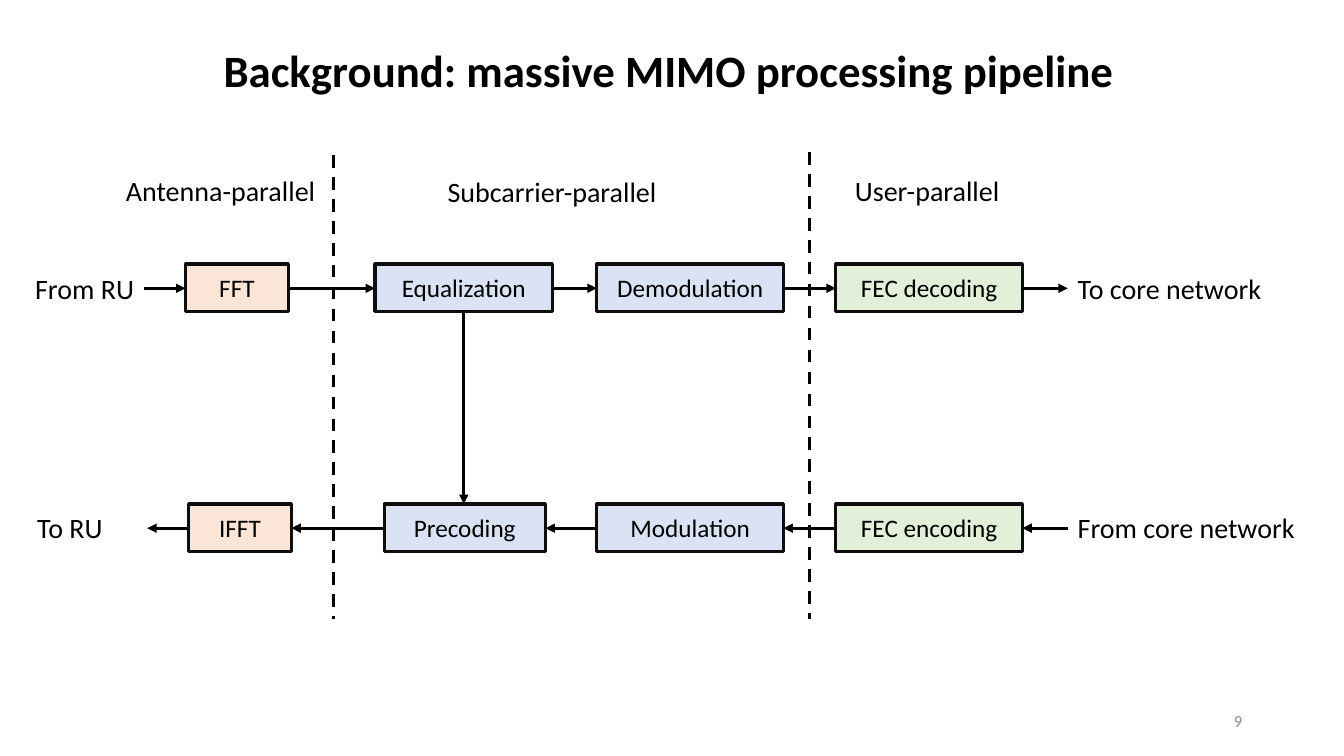
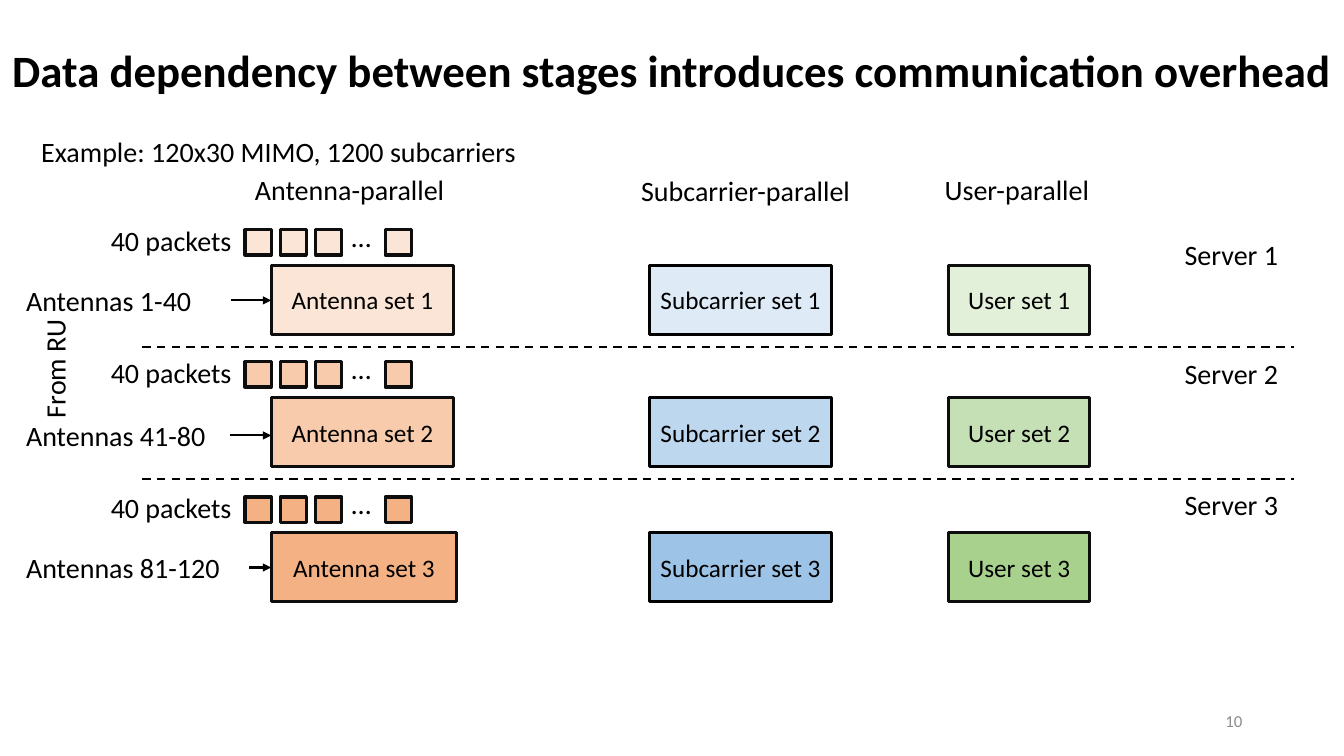
"""Build two slides on the massive MIMO processing pipeline."""
from lxml import etree
from pptx import Presentation
from pptx.dml.color import RGBColor
from pptx.enum.dml import MSO_LINE
from pptx.enum.shapes import MSO_CONNECTOR, MSO_SHAPE
from pptx.enum.text import MSO_ANCHOR, PP_ALIGN
from pptx.oxml.ns import qn
from pptx.util import Inches, Pt

LEFT, CENTER, RIGHT = PP_ALIGN.LEFT, PP_ALIGN.CENTER, PP_ALIGN.RIGHT
TOP, MIDDLE = MSO_ANCHOR.TOP, MSO_ANCHOR.MIDDLE
RECTANGLE, STRAIGHT, DASH = MSO_SHAPE.RECTANGLE, MSO_CONNECTOR.STRAIGHT, MSO_LINE.DASH
FONT = "Calibri"
COLORS = {
    "text": "000000", "outline": "0D0D0D", "number": "8C8C8C", "subcarrier": "DAE3F3",
    "antenna1": "FBE5D6", "antenna2": "F8CBAD", "antenna3": "F4B183",
    "subcarrier1": "DEEBF7", "subcarrier2": "BDD7EE", "subcarrier3": "9DC3E6",
    "user1": "E2F0D9", "user2": "C5E0B4", "user3": "A9D18E",
}
ROW_H = 0.44


def add_box(s, text, x, y, w, h, size=20, fill=None, color="text",
            align=LEFT, anchor=TOP, outline="outline"):
    at = Inches(x), Inches(y), Inches(w), Inches(h)
    if fill:
        sp = s.shapes.add_shape(RECTANGLE, *at)
        sp.shadow.inherit = False
        sp.fill.solid()
        sp.fill.fore_color.rgb = RGBColor.from_string(COLORS[fill])
        sp.line.color.rgb = RGBColor.from_string(COLORS[outline])
        sp.line.width = Pt(2.25)
        align, anchor = CENTER, MIDDLE
    else:
        sp = s.shapes.add_textbox(*at)
    if text:
        tf = sp.text_frame
        tf.word_wrap = True
        tf.vertical_anchor = anchor
        if align == CENTER:
            tf.margin_left = tf.margin_right = 0
        p = tf.paragraphs[0]
        p.text = text
        p.alignment = align
        p.font.name = FONT
        p.font.size = Pt(size)
        p.font.color.rgb = RGBColor.from_string(COLORS[color])
    return sp


def add_line(s, x1, y1, x2, y2, width=2.25, arrow=True):
    line = s.shapes.add_connector(STRAIGHT, Inches(x1), Inches(y1), Inches(x2), Inches(y2))
    line.line.color.rgb = RGBColor.from_string(COLORS["text"])
    line.line.width = Pt(width)
    if arrow:
        etree.SubElement(line.line._get_or_add_ln(), qn("a:tailEnd"), type="triangle")
    else:
        line.line.dash_style = DASH
    etree.SubElement(line._element.spPr, qn("a:effectLst"))


prs = Presentation()
prs.slide_width, prs.slide_height = Inches(13.33), Inches(7.5)

slides = []
for title, title_w, number in (
    ("Background: massive MIMO processing pipeline", 13.27, "9"),
    ("Data dependency between stages introduces communication overhead", 13.33, "10"),
):
    s = prs.slides.add_slide(prs.slide_layouts[6])
    sp = add_box(s, title, 0, 0, title_w, 1.45, size=32, align=CENTER, anchor=MIDDLE)
    p = sp.text_frame.paragraphs[0]
    p.font.bold = True
    p.line_spacing = 0.9
    add_box(s, number, 9.42, 6.95, 3, 0.4, size=12, color="number", align=RIGHT, anchor=MIDDLE)
    slides.append(s)
pipeline, dependency = slides

for s, headings in (
    (pipeline, ((1.15, 1.67), (4.34, 1.68), (8.38, 1.67))),
    (dependency, ((2.43, 1.66), (6.26, 1.67), (9.27, 1.66))),
):
    for name, w, (x, y) in zip(("Antenna", "Subcarrier", "User"), (2.15, 2.32, 1.68), headings):
        add_box(s, f"{name}-parallel", x, y, w, ROW_H)

STAGE_H = 0.47
NETWORK_X = 10.59
uplink = (("FFT", 1.84, 1.02, "antenna1"), ("Equalization", 3.72, 1.76, "subcarrier"),
          ("Demodulation", 5.92, 1.85, "subcarrier"), ("FEC decoding", 8.29, 1.85, "user1"))
downlink = (("IFFT", 1.87, 1.02, "antenna1"), ("Precoding", 3.81, 1.6, "subcarrier"),
            ("Modulation", 5.92, 1.85, "subcarrier"), ("FEC encoding", 8.29, 1.85, "user1"))
for y, stages, to_core, radio, radio_x, radio_end, core, core_w in (
    (2.62, uplink, True, "From RU", 0.25, 1.43, "To core network", 2.17),
    (5, downlink, False, "To RU", 0.27, 1.46, "From core network", 2.38),
):
    add_box(pipeline, radio, radio_x, y + 0.02, 1.18, ROW_H)
    add_box(pipeline, core, NETWORK_X, y + 0.02, core_w, ROW_H)
    for name, x, w, fill in stages:
        add_box(pipeline, name, x, y, w, STAGE_H, size=18, fill=fill)
    starts = [radio_end] + [x + w for name, x, w, fill in stages]
    ends = [x for name, x, w, fill in stages] + [NETWORK_X]
    arrow_y = y + 0.24
    for start, end in zip(starts, ends):
        x1, x2 = (start, end) if to_core else (end, start)
        add_line(pipeline, x1, arrow_y, x2, arrow_y)
add_line(pipeline, 4.6, 3.09, 4.6, 5)
for x, y in ((3.31, 1.54), (8.03, 1.51)):
    add_line(pipeline, x, y, x, 6.14, arrow=False)

SET_H = 0.69
add_box(dependency, "Example: 120x30 MIMO, 1200 subcarriers", 0.31, 1.29, 5.36, ROW_H)
add_box(dependency, "From RU", -0.09, 3.39, 1.27, ROW_H).rotation = 270
for n, y, antenna_w, server_y, antennas, label_y, arrow_x in (
    (1, 2.63, 1.81, 2.31, "1-40", 2.76, 2.29),
    (2, 3.94, 1.81, 3.49, "41-80", 4.1, 2.28),
    (3, 5.28, 1.84, 4.79, "81-120", 5.41, 2.47),
):
    for name, x, w, outline in (("Antenna", 2.69, antenna_w, "outline"),
                                ("Subcarrier", 6.44, 1.81, "text"),
                                ("User", 9.41, 1.4, "outline")):
        add_box(dependency, f"{name} set {n}", x, y, w, SET_H, size=18,
                fill=f"{name.lower()}{n}", outline=outline)
    add_box(dependency, f"Server {n}", 11.65, server_y, 1.24, ROW_H)
    add_box(dependency, f"Antennas {antennas}", 0.16, label_y, 2.31, ROW_H)
    add_line(dependency, arrow_x, label_y + 0.22, 2.69, label_y + 0.22, width=1.5)
    add_box(dependency, "40 packets", 1, y - 0.46, 1.45, ROW_H)
    for x in (2.43, 2.78, 3.13, 3.82):
        add_box(dependency, "", x, y - 0.35, 0.26, 0.25, fill=f"antenna{n}")
    add_box(dependency, "…", 3.39, y - 0.5, 0.53, ROW_H)
for y in (3.44, 4.75):
    add_line(dependency, 1.41, y, 12.83, y, width=1.5, arrow=False)

prs.save("out.pptx")
